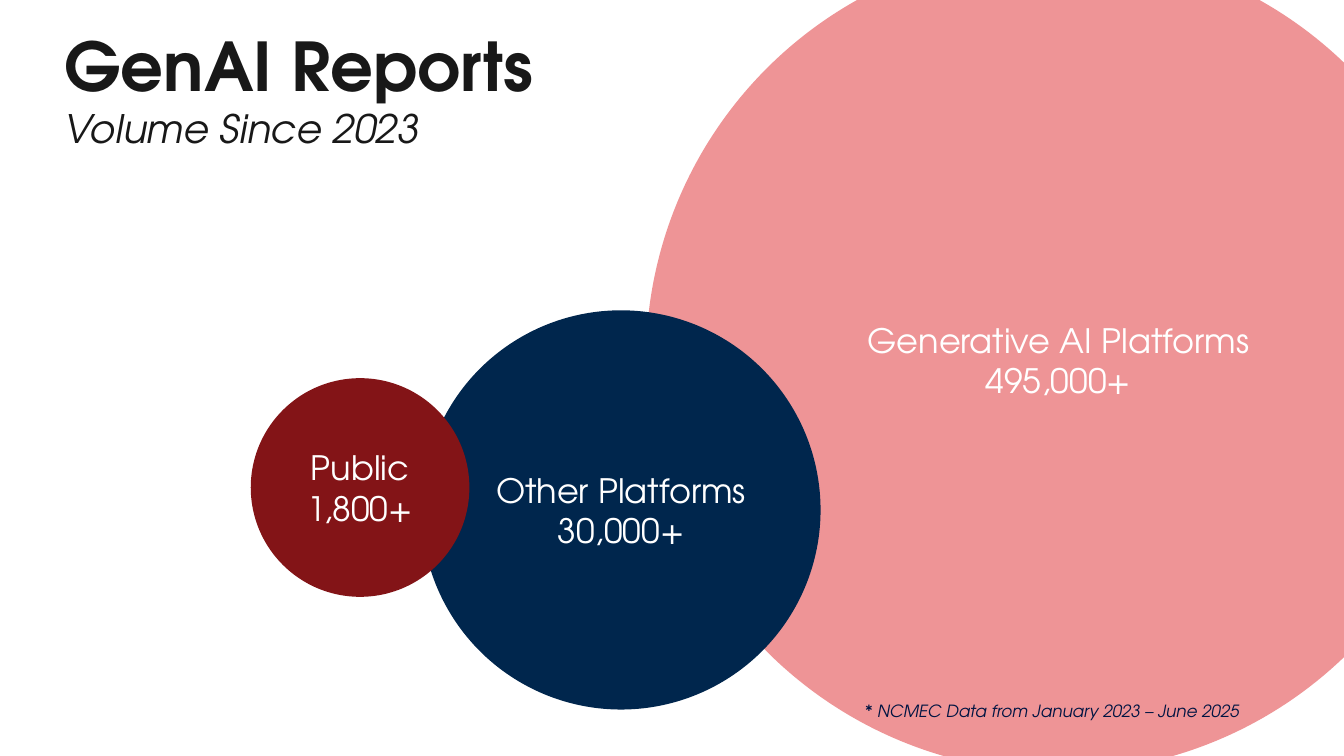
from pptx import Presentation
from pptx.dml.color import RGBColor
from pptx.enum.shapes import MSO_SHAPE as Shape
from pptx.enum.text import MSO_ANCHOR as Anchor, MSO_AUTO_SIZE as AutoSize, PP_ALIGN as Align
from pptx.util import Cm, Pt

FACE = "TeX Gyre Adventor"
HEADING = {"size": Pt(48), "bold": True, "italic": False}
SUBHEADING = {"size": Pt(28), "bold": False, "italic": True}
BUBBLE_LABEL = {"size": Pt(24)}
FOOTNOTE = {"size": Pt(12), "italic": True}

# Label, count, fill, then left, top and diameter in cm, from back to front
BUBBLES = [
    ("Generative AI Platforms", "495,000+", "EE9496", (16.28, -1.32, 20.78)),
    ("Other Platforms", "30,000+", "00264D", (10.62, 7.82, 10.06)),
    ("Public", "1,800+", "831417", (6.32, 9.53, 5.51)),
]


def colour(hex_value):
    return RGBColor.from_string(hex_value)


def write_lines(frame, lines, ink, align, anchor):
    """Fill a text frame with (text, format) lines, one paragraph each."""
    layout = {"word_wrap": True, "auto_size": AutoSize.NONE, "vertical_anchor": anchor}
    for key, value in layout.items():
        setattr(frame, key, value)
    for index, (text, style) in enumerate(lines):
        line = frame.add_paragraph() if index else frame.paragraphs[0]
        line.alignment = align
        words = line.add_run()
        words.text = text
        for key, value in {"name": FACE, **style}.items():
            setattr(words.font, key, value)
        words.font.color.rgb = colour(ink)


def place_title(slide, left, top, width, height):
    title = slide.shapes.title
    box = {"left": left, "top": top, "width": width, "height": height}
    for key, value in box.items():
        setattr(title, key, Cm(value))
    lines = [("GenAI Reports", HEADING), ("Volume Since 2023", SUBHEADING)]
    write_lines(title.text_frame, lines, "181818", Align.LEFT, Anchor.TOP)


def add_bubble(slide, label, count, fill, left, top, diameter):
    bubble = slide.shapes.add_shape(
        Shape.OVAL, Cm(left), Cm(top), Cm(diameter), Cm(diameter))
    bubble.shadow.inherit = False
    bubble.fill.solid()
    bubble.fill.fore_color.rgb = colour(fill)
    bubble.line.fill.background()
    lines = [(label, BUBBLE_LABEL), (count, BUBBLE_LABEL)]
    write_lines(bubble.text_frame, lines, "FFFFFF", Align.CENTER, Anchor.MIDDLE)


def add_footnote(slide, left, top, width, height):
    note = slide.shapes.add_textbox(Cm(left), Cm(top), Cm(width), Cm(height))
    lines = [("* NCMEC Data from January 2023 – June 2025", FOOTNOTE)]
    write_lines(note.text_frame, lines, "001442", Align.LEFT, Anchor.TOP)


def main():
    deck = Presentation()
    deck.slide_width, deck.slide_height = Cm(33.87), Cm(19.05)
    title_only = deck.slide_layouts[5]
    slide = deck.slides.add_slide(title_only)

    # Heading
    place_title(slide, 1.37, 0.48, 30.3, 3.51)

    # Report volumes by origin
    for label, count, fill, circle in BUBBLES:
        add_bubble(slide, label, count, fill, *circle)

    # Data credit
    add_footnote(slide, 21.56, 17.53, 11.05, 0.76)

    deck.save("out.pptx")


if __name__ == "__main__":
    main()
